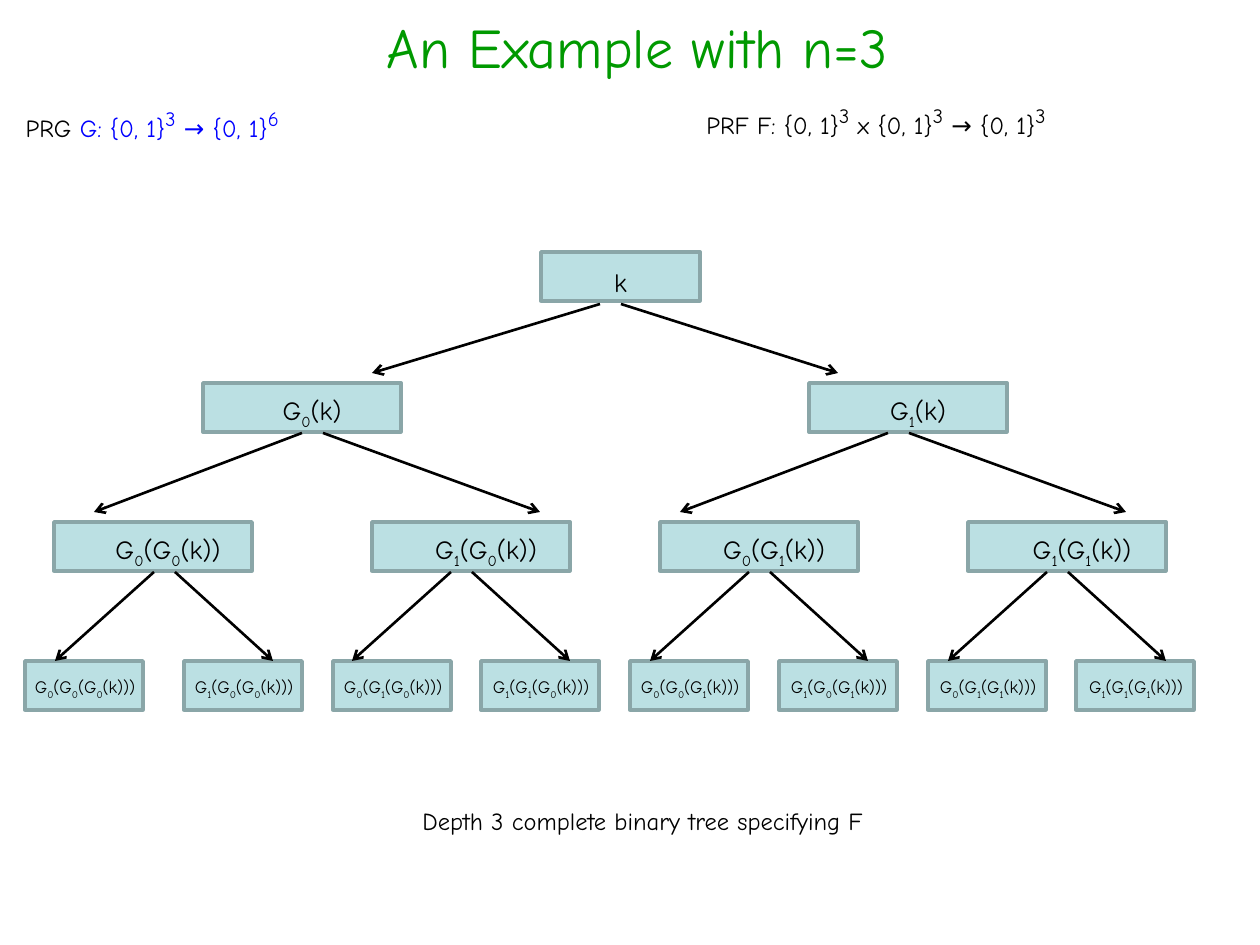
from itertools import groupby

from lxml import etree
from pptx import Presentation
from pptx.dml.color import RGBColor
from pptx.enum.shapes import MSO_CONNECTOR, MSO_SHAPE
from pptx.enum.text import MSO_ANCHOR, PP_ALIGN
from pptx.oxml.ns import qn
from pptx.util import Pt

RECTANGLE = MSO_SHAPE.RECTANGLE
STRAIGHT = MSO_CONNECTOR.STRAIGHT
CENTER, LEFT = PP_ALIGN.CENTER, PP_ALIGN.LEFT
TOP = MSO_ANCHOR.TOP

FONT = "Comic Neue"
COLORS = {"title": "009900", "text": "000000", "generator": "0000FF",
          "box": "BBE0E3", "border": "8AA6A8"}
SCALE = 914400 / 126

TITLE = ("An Example with n=3", (20, 6, 1235, 70))
NOTES = [
    ((5, 96, 319, 43), [(" PRG ", "text"), ("G: {0, 1}", "generator"), ("^3", "generator"),
                        (" → {0, 1}", "generator"), ("^6", "generator")]),
    ((694, 93, 431, 43), [("PRF F: {0, 1}", "text"), ("^3", "text"), (" x {0, 1}", "text"),
                          ("^3", "text"), (" → {0, 1}", "text"), ("^3", "text")]),
    ((410, 800, 578, 43), [("Depth 3 complete binary tree specifying F", "text")]),
]
BOX_HEIGHT = 49
LEVELS = [
    {"top": 252, "width": 159, "lefts": [541], "label": (1, 8, 157, 44), "size": 15},
    {"top": 383, "width": 198, "lefts": [203, 809], "label": (10, 5, 198, 44), "size": 15},
    {"top": 522, "width": 198, "lefts": [54, 372, 660, 968], "label": (-10, 5, 248, 44),
     "size": 15},
    {"top": 661, "width": 118, "lefts": [25] + [round(184 + 148.7 * i) for i in range(7)],
     "label": (-20, 9, 160, 34), "size": 10},
]
FORK_GAP = 21
FORKS = [
    {"top": 304, "bottom": 373, "starts": [600], "spread": (-228, 238)},
    {"top": 433, "bottom": 512, "starts": [302, 888], "spread": (-208, 238)},
    {"top": 572, "bottom": 661, "starts": [154, 451, 749, 1047], "spread": (-99, 119)},
]


def emu(*lengths):
    return [round(length * SCALE) for length in lengths]


def color(name):
    return RGBColor.from_string(COLORS[name])


def add_text(shapes, place, size, runs, alignment):
    frame = shapes.add_textbox(*emu(*place)).text_frame
    frame.word_wrap = True
    paragraph = frame.paragraphs[0]
    paragraph.alignment = alignment
    paragraph.font.name = FONT
    paragraph.font.size = Pt(size)
    for text, color_name, baseline, run_size in runs:
        run = paragraph.add_run()
        run.text = text
        run.font.name = FONT
        run.font.size = Pt(run_size)
        run.font.color.rgb = color(color_name)
        if baseline:
            run.font._element.set("baseline", str(baseline * 1000))


def note_runs(pieces):
    return [(text[1:], name, 30, 20) if text.startswith("^") else (text, name, 0, 14)
            for text, name in pieces]


def label_runs(label, size):
    return [("".join(letters), "text", -25 if digit else 0, size)
            for digit, letters in groupby(label, str.isdigit)]


def add_node(shapes, left, level, label):
    group = shapes.add_group_shape()
    box = group.shapes.add_shape(
        RECTANGLE, *emu(left, level["top"], level["width"], BOX_HEIGHT))
    box.shadow.inherit = False
    box.fill.solid()
    box.fill.fore_color.rgb = color("box")
    box.line.color.rgb = color("border")
    box.line.width = Pt(2)
    shift, drop, width, height = level["label"]
    add_text(group.shapes, (left + shift, level["top"] + drop, width, height),
             level["size"], label_runs(label, level["size"]), CENTER)


def add_arrow(shapes, *ends):
    arrow = shapes.add_connector(STRAIGHT, *emu(*ends))
    arrow.line.color.rgb = color("text")
    arrow.line.width = Pt(1.5)
    etree.SubElement(arrow.line._get_or_add_ln(), qn("a:tailEnd"), type="arrow")
    etree.SubElement(arrow._element.spPr, qn("a:effectLst"))


def main():
    presentation = Presentation()
    presentation.slide_width, presentation.slide_height = emu(1260, 945)
    slide = presentation.slides.add_slide(presentation.slide_layouts[5])

    title = slide.shapes.title
    text, place = TITLE
    title.left, title.top, title.width, title.height = emu(*place)
    title.text_frame.text = text
    title.text_frame.vertical_anchor = TOP
    paragraph = title.text_frame.paragraphs[0]
    paragraph.alignment = CENTER
    paragraph.font.name = FONT
    paragraph.font.size = Pt(32)
    paragraph.font.color.rgb = color("title")

    for place, pieces in NOTES:
        add_text(slide.shapes, place, 14, note_runs(pieces), LEFT)

    labels = ["k"]
    for level in LEVELS:
        for left, label in zip(level["lefts"], labels):
            add_node(slide.shapes, left, level, label)
        labels = [f"G{bit}({label})" for label in labels for bit in (0, 1)]

    for fork in FORKS:
        for start in fork["starts"]:
            for side, reach in enumerate(fork["spread"]):
                add_arrow(slide.shapes, start + side * FORK_GAP, fork["top"],
                          start + reach, fork["bottom"])

    presentation.save("out.pptx")


if __name__ == "__main__":
    main()
